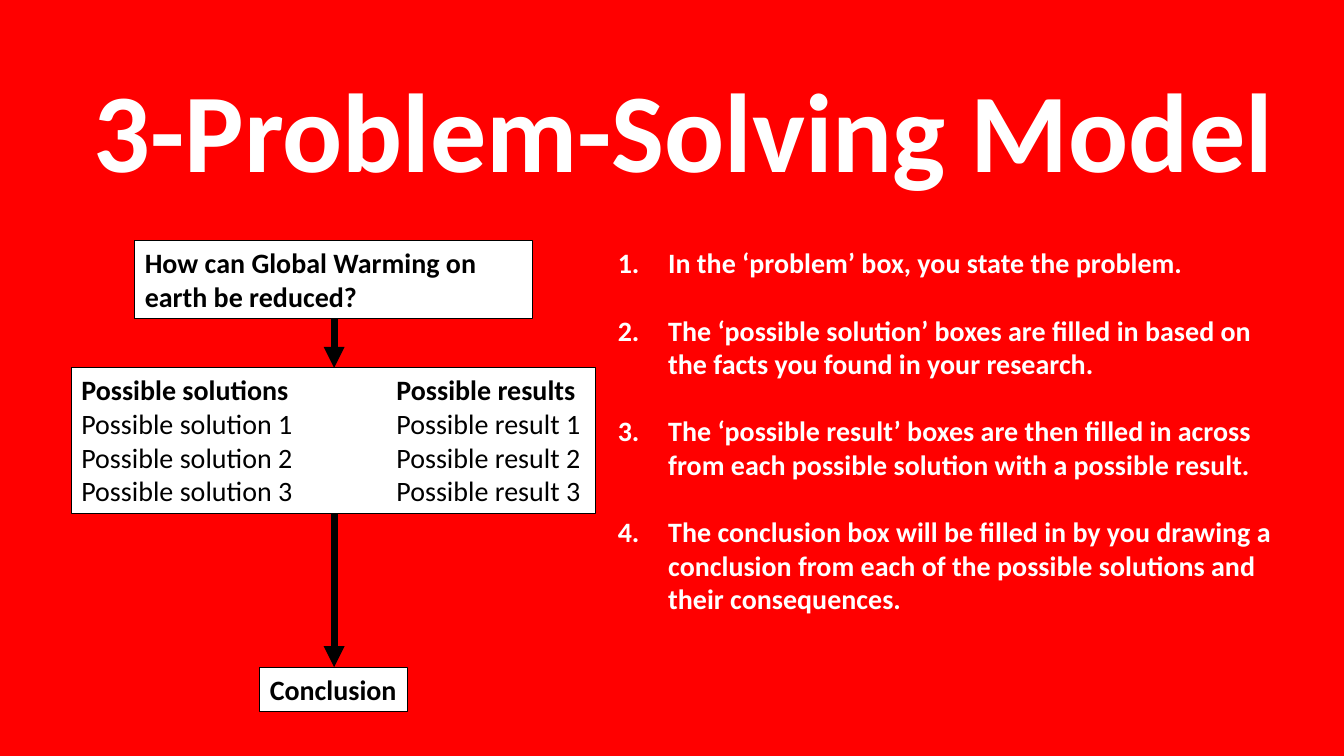
from lxml.etree import SubElement
from pptx import Presentation
from pptx.dml.color import RGBColor
from pptx.enum.shapes import MSO_CONNECTOR, MSO_SHAPE
from pptx.enum.text import MSO_ANCHOR, MSO_AUTO_SIZE, PP_ALIGN
from pptx.oxml.ns import qn
from pptx.util import Cm, Pt


def color(hex_string):
    return RGBColor.from_string(hex_string)


def write(shape, lines, wrap, size, ink):
    frame = shape.text_frame
    frame_format = {"word_wrap": wrap, "auto_size": MSO_AUTO_SIZE.SHAPE_TO_FIT_TEXT,
                    "vertical_anchor": MSO_ANCHOR.TOP}
    for name, value in frame_format.items():
        setattr(frame, name, value)
    for number, (text, bold) in enumerate(lines):
        paragraph = frame.paragraphs[0] if number == 0 else frame.add_paragraph()
        paragraph.alignment = PP_ALIGN.LEFT
        run = paragraph.add_run()
        run.text = text
        for name, value in {"name": "Calibri", "size": Pt(size), "bold": bold}.items():
            setattr(run.font, name, value)
        run.font.color.rgb = color(ink)
    return frame.paragraphs


presentation = Presentation()
presentation.slide_width = Cm(33.87)
presentation.slide_height = Cm(19.05)
slide = presentation.slides.add_slide(presentation.slide_layouts[6])
slide.background.fill.solid()
slide.background.fill.fore_color.rgb = color("FF0000")

heading = slide.shapes.add_textbox(Cm(2.11), Cm(1.4), Cm(30.53), Cm(3.68))
write(heading, [("3-Problem-Solving Model", True)], False, 80, "FFFFFF")

steps = [
    "In the ‘problem’ box, you state the problem.",
    "The ‘possible solution’ boxes are filled in based on the facts you found in your research.",
    "The ‘possible result’ boxes are then filled in across from each possible solution with a possible result.",
    "The conclusion box will be filled in by you drawing a conclusion from each of the possible solutions and their consequences.",
]
instructions = slide.shapes.add_textbox(Cm(15.32), Cm(6.07), Cm(17.35), Cm(9.65))
for step in write(instructions, [(text, True) for text in steps], True, 20, "FFFFFF"):
    step.space_after = Pt(24)
    properties = step._p.get_or_add_pPr()
    properties.set("marL", str(Cm(1.27)))
    properties.set("indent", str(-Cm(1.27)))
    SubElement(properties, qn("a:buFont"), typeface="+mj-lt")
    SubElement(properties, qn("a:buAutoNum"), type="arabicPeriod")
step.space_after = Pt(0)

solutions = [("Possible solutions\tPossible results", True)]
solutions += [(f"Possible solution {n}\tPossible result {n}", False) for n in range(1, 4)]
stages = [
    (3.4, 6.07, 10.03, 1.96, True, [("How can Global Warming on earth be reduced?", True)]),
    (1.8, 9.27, 13.21, 3.68, True, solutions),
    (6.55, 16.81, 3.73, 1.12, False, [("Conclusion", True)]),
]
for left, top, width, height, wrap, lines in stages:
    stage = slide.shapes.add_shape(MSO_SHAPE.RECTANGLE, Cm(left), Cm(top), Cm(width), Cm(height))
    stage.shadow.inherit = False
    stage.fill.solid()
    stage.fill.fore_color.rgb = color("FFFFFF")
    stage.line.color.rgb = color("000000")
    stage.line.width = Pt(0.75)
    for paragraph in write(stage, lines, wrap, 20, "000000"):
        if lines is solutions:
            tabs = SubElement(paragraph._p.get_or_add_pPr(), qn("a:tabLst"))
            SubElement(tabs, qn("a:tab"), pos=str(Cm(7.94)), algn="l")

for start, end in [(8.03, 9.27), (12.95, 16.81)]:
    arrow = slide.shapes.add_connector(MSO_CONNECTOR.STRAIGHT, Cm(8.42), Cm(start), Cm(8.42), Cm(end))
    arrow.line.color.rgb = color("000000")
    arrow.line.width = Pt(5)
    SubElement(arrow.line._get_or_add_ln(), qn("a:tailEnd"), type="triangle")
    SubElement(arrow._element.spPr, qn("a:effectLst"))

presentation.save("out.pptx")
